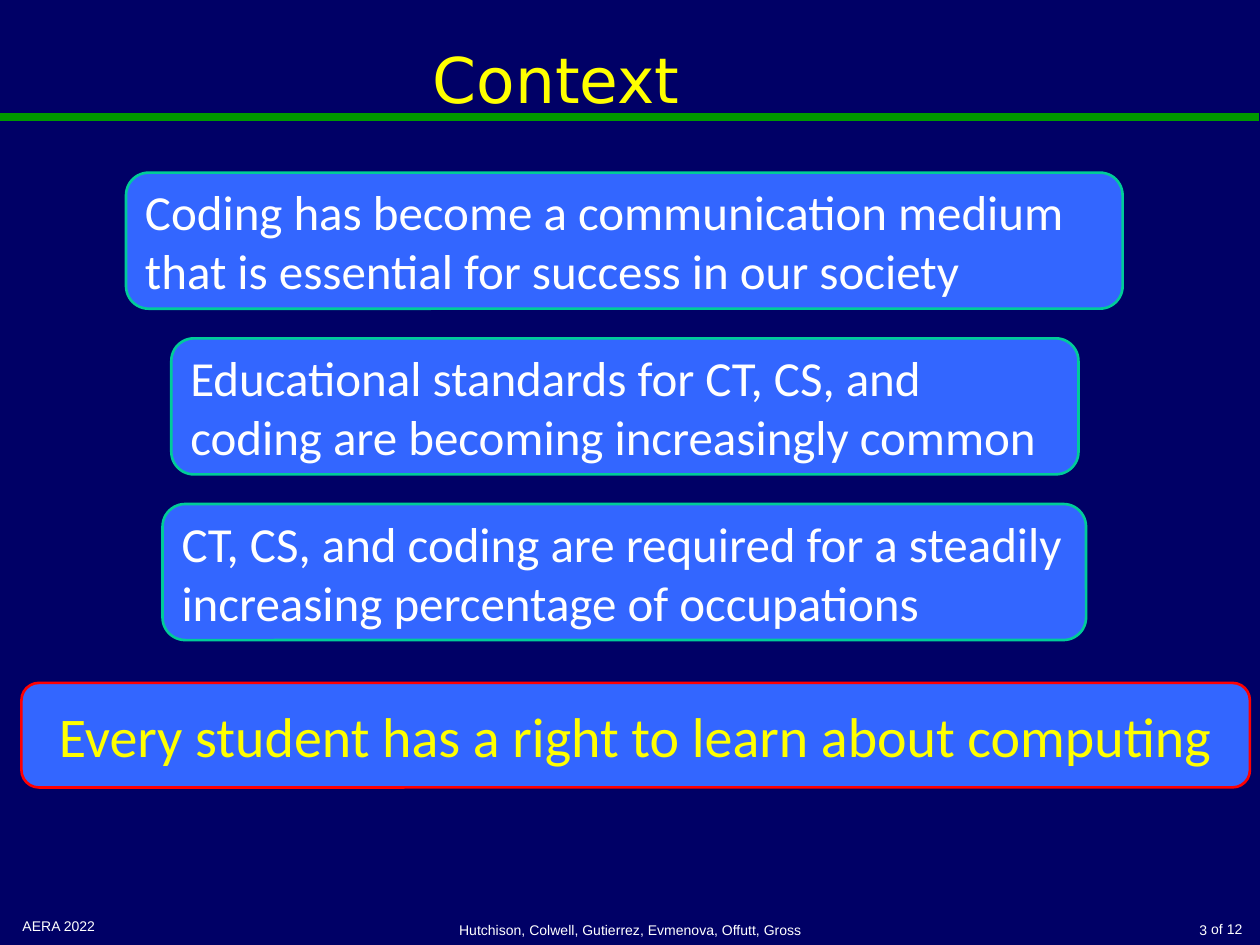
from dataclasses import dataclass
from lxml import etree
from pptx import Presentation, util as u
from pptx.dml.color import RGBColor
from pptx.enum import shapes, text
from pptx.oxml.ns import qn


@dataclass(frozen=True)
class Theme:
    back: str = "000066"
    rule: str = "009900"
    card: str = "3366FF"
    edge: str = "00CC99"
    alert: str = "FF0000"
    ink: str = "FFFFFF"
    gold: str = "FFFF00"
    head: int = 36
    claim: int = 32
    body: int = 28
    foot: int = 8


theme = Theme()
rgb = RGBColor.from_string
left, mid, right = text.PP_ALIGN.LEFT, text.PP_ALIGN.CENTER, text.PP_ALIGN.RIGHT
top, center, base = text.MSO_ANCHOR.TOP, text.MSO_ANCHOR.MIDDLE, text.MSO_ANCHOR.BOTTOM


def write(shape, words, size, face, color, align, anchor):
    """Fill a shape with one styled run."""
    frame = shape.text_frame
    frame.word_wrap = True
    frame.auto_size = text.MSO_AUTO_SIZE.NONE
    frame.vertical_anchor = anchor
    para = frame.paragraphs[0]
    para.alignment = align
    run = para.add_run()
    run.text = words
    run.font.size = u.Pt(size)
    run.font.name = face
    run.font.color.rgb = rgb(color)


deck = Presentation()
deck.slide_width, deck.slide_height = u.Inches(10), u.Inches(7.5)
slide = deck.slides.add_slide(deck.slide_layouts[5])
slide.background.fill.solid()
slide.background.fill.fore_color.rgb = rgb(theme.back)

# Rule under the title
rule = slide.shapes.add_connector(
    shapes.MSO_CONNECTOR.STRAIGHT, 0, u.Inches(0.93), u.Inches(9.99), u.Inches(0.93))
rule.line.color.rgb = rgb(theme.rule)
rule.line.width = u.Pt(4.5)
etree.SubElement(rule._element.spPr, qn("a:effectLst"))

# Title
title = slide.shapes.title
title.left, title.top = u.Inches(0.08), u.Inches(0)
title.width, title.height = u.Inches(8.67), u.Inches(1.25)
write(title, "Context", theme.head, "DejaVu Sans", theme.gold, mid, center)

# Footer
notes = [
    ("AERA 2022", 0.08, 7.23, 2.33, left, top),
    ("Hutchison, Colwell, Gutierrez, Evmenova, Offutt, Gross", 3.42, 7.23, 3.17, mid, base),
    ("3", 7.87, 7.23, 1.81, right, base),
    ("of 12", 9.5, 7.26, 0.46, right, top),
]
for words, x, y, wide, align, anchor in notes:
    box = slide.shapes.add_textbox(u.Inches(x), u.Inches(y), u.Inches(wide), u.Inches(0.27))
    write(box, words, theme.foot, "Arial", theme.ink, align, anchor)

# Three reasons, evenly stepped, and the claim they lead to
reasons = [
    ("Coding has become a communication medium that is essential for success in our society",
     1, 7.91),
    ("Educational standards for CT, CS, and coding are becoming increasingly common",
     1.36, 7.2),
    ("CT, CS, and coding are required for a steadily increasing percentage of occupations",
     1.29, 7.33),
]
first, step = 1.37, 1.315
cards = [
    (words, x, first + i * step, wide, 1.08, theme.edge, theme.body, theme.ink, left)
    for i, (words, x, wide) in enumerate(reasons)
]
cards.append(("Every student has a right to learn about computing",
              0.17, 5.42, 9.75, 0.83, theme.alert, theme.claim, theme.gold, mid))
for words, x, y, wide, high, edge, size, color, align in cards:
    card = slide.shapes.add_shape(
        shapes.MSO_SHAPE.ROUNDED_RECTANGLE,
        u.Inches(x), u.Inches(y), u.Inches(wide), u.Inches(high))
    card.shadow.inherit = False
    card.fill.solid()
    card.fill.fore_color.rgb = rgb(theme.card)
    card.line.color.rgb = rgb(edge)
    card.line.width = u.Pt(1.5)
    write(card, words, size, "Calibri", color, align, center)

deck.save("out.pptx")
